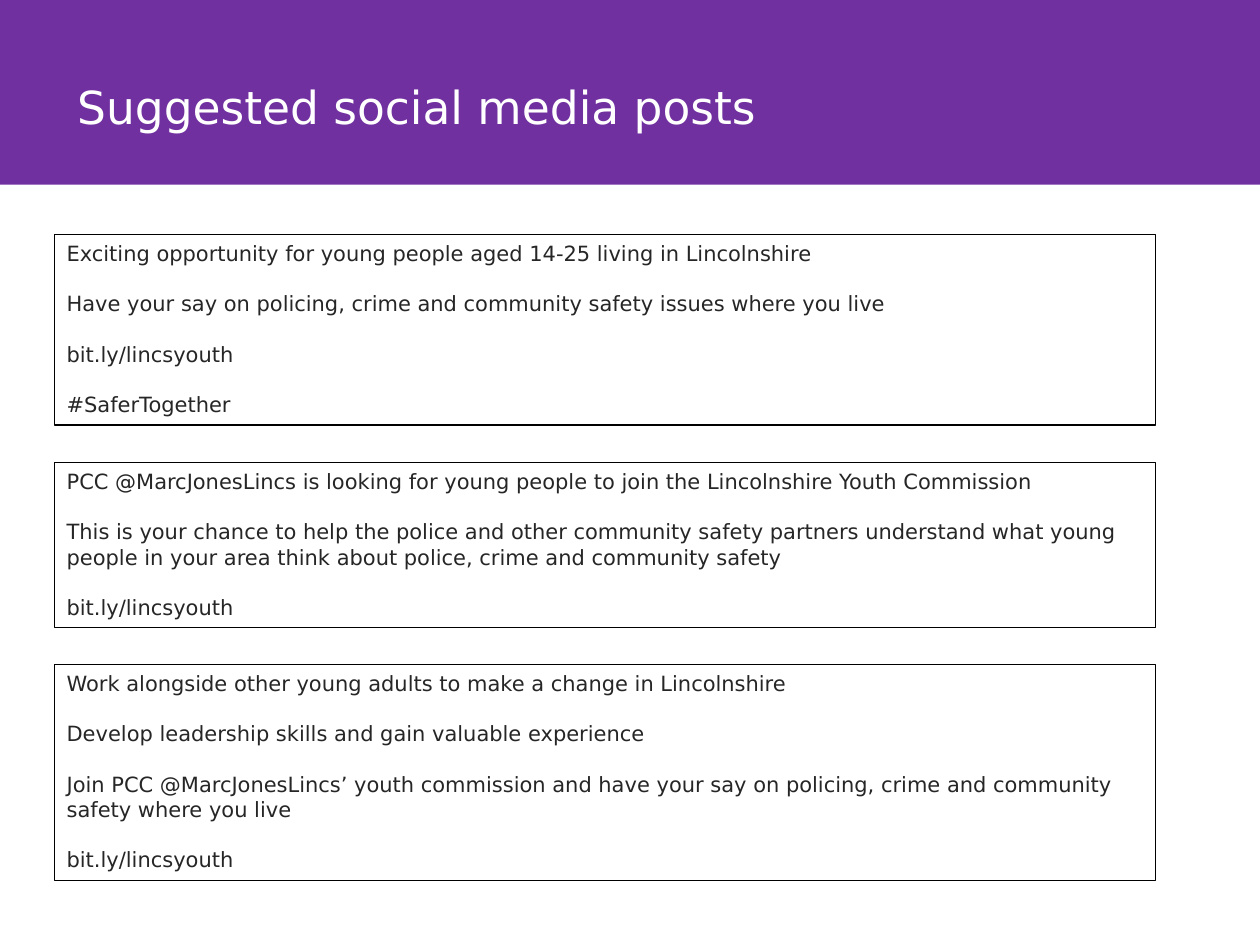
from dataclasses import dataclass

from pptx import Presentation
from pptx.dml.color import RGBColor
from pptx.enum.shapes import MSO_SHAPE
from pptx.enum.text import MSO_ANCHOR, PP_ALIGN
from pptx.util import Pt

RECT = MSO_SHAPE.RECTANGLE
TOP = MSO_ANCHOR.TOP
LEFT = PP_ALIGN.LEFT

FONT = "DejaVu Sans"
COLORS = {"band": "7030A0", "title": "FFFFFF", "text": "262626", "line": "000000"}
LINK = "bit.ly/lincsyouth"


@dataclass
class Post:
    top: float
    height: float
    lines: list[str]


POSTS = [
    Post(133.9, 109, [
        "Exciting opportunity for young people aged 14-25 living in Lincolnshire",
        "Have your say on policing, crime and community safety issues where you live",
        LINK,
        "#SaferTogether",
    ]),
    Post(264.2, 94.3, [
        "PCC @MarcJonesLincs is looking for young people to join the "
        "Lincolnshire Youth Commission",
        "This is your chance to help the police and other community safety partners "
        "understand what young people in your area think about police, crime and "
        "community safety",
        LINK,
    ]),
    Post(379.6, 123.6, [
        "Work alongside other young adults to make a change in Lincolnshire",
        "Develop leadership skills and gain valuable experience",
        "Join PCC @MarcJonesLincs’ youth commission and have your say on policing, "
        "crime and community safety where you live",
        LINK,
    ]),
]


def color(name: str) -> RGBColor:
    return RGBColor.from_string(COLORS[name])


def write(shape, lines: list[str], *, size: float, ink: str,
          gap: float = 0, spacing: float = 1.0) -> None:
    frame = shape.text_frame
    frame.word_wrap = True
    frame.vertical_anchor = TOP
    for i, line in enumerate(lines):
        para = frame.add_paragraph() if i else frame.paragraphs[0]
        para.alignment = LEFT
        para.line_spacing = spacing
        para.space_before = Pt(gap if i else 0)
        run = para.add_run()
        run.text = line
        run.font.name = FONT
        run.font.size = Pt(size)
        run.font.color.rgb = color(ink)


def draw_band(slide) -> None:
    band = slide.shapes.add_shape(RECT, Pt(0), Pt(0), Pt(720), Pt(105.5))
    band.shadow.inherit = False
    band.fill.solid()
    band.fill.fore_color.rgb = color("band")
    band.line.fill.background()


def draw_post(slide, post: Post) -> None:
    box = slide.shapes.add_shape(RECT, Pt(31), Pt(post.top), Pt(629.3), Pt(post.height))
    box.shadow.inherit = False
    box.fill.background()
    box.line.color.rgb = color("line")
    box.line.width = Pt(0.75)
    write(box, post.lines, size=12, ink="text", gap=14.4)


def main() -> None:
    deck = Presentation()
    deck.slide_width, deck.slide_height = Pt(720), Pt(540)
    slide = deck.slides.add_slide(deck.slide_layouts[6])

    # Header band and title
    draw_band(slide)
    title = slide.shapes.add_textbox(Pt(37), Pt(26), Pt(605.5), Pt(48))
    write(title, ["Suggested social media posts"], size=26, ink="title", spacing=1.5)

    # Framed posts
    for post in POSTS:
        draw_post(slide, post)

    deck.save("out.pptx")


if __name__ == "__main__":
    main()
